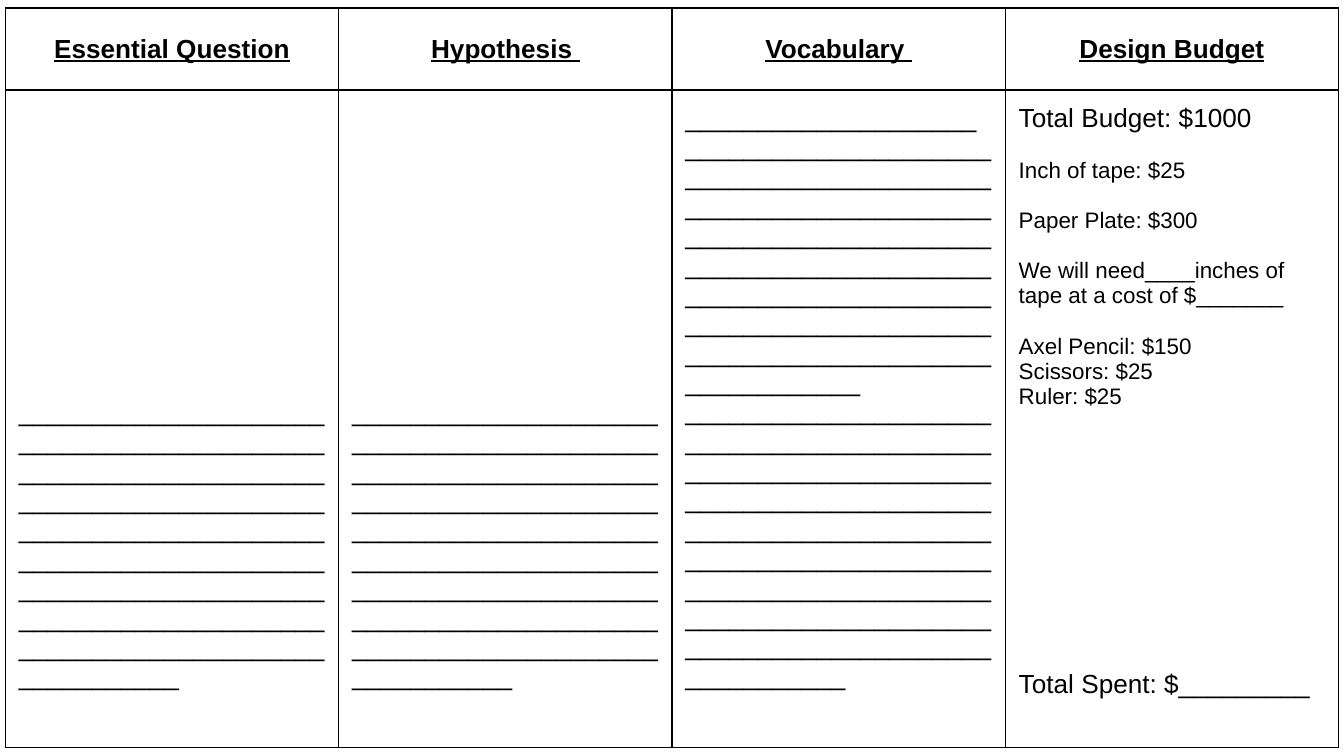
from dataclasses import dataclass

from lxml.etree import SubElement
from pptx import Presentation
from pptx.dml.color import RGBColor
from pptx.enum.text import MSO_ANCHOR, PP_ALIGN
from pptx.oxml.ns import qn
from pptx.util import Inches, Pt


@dataclass(frozen=True)
class Theme:
    ink: str = "000000"
    font: str = "Arial"
    large: float = 14
    small: float = 12
    border: float = 0.75


THEME = Theme()
PAGE_WIDTH = Inches(10)
PAGE_HEIGHT = PAGE_WIDTH * 9 // 16
HEADINGS = ["Essential Question", "Hypothesis ", "Vocabulary ", "Design Budget"]
COLUMN_WIDTH = 2.48
ROW_HEIGHTS = [0.61, 4.89]
PADDING = 0.1
ANSWER_TOP = 2.29
ITEM_GAP = 13.5
TOTAL_GAP = 139.5

# Each line: wording, type size, space after in points
BUDGET = [
    ("Total Budget: $1000", THEME.large, ITEM_GAP),
    ("Inch of tape: $25", THEME.small, ITEM_GAP),
    ("Paper Plate: $300", THEME.small, ITEM_GAP),
    ("We will need____inches of tape at a cost of $_______", THEME.small, ITEM_GAP),
    ("Axel Pencil: $150", THEME.small, 0),
    ("Scissors: $25", THEME.small, 0),
    ("Ruler: $25", THEME.small, TOTAL_GAP),
    ("Total Spent: $_________", THEME.large, 0),
]


def apply_format(target, values):
    for name, value in values.items():
        setattr(target, name, value)


def blank_lines(*counts):
    """Return one writing-line paragraph for each count of underscores."""
    return [("_" * count, THEME.large, 0) for count in counts]


def draw_borders(cell):
    properties = cell._tc.get_or_add_tcPr()
    for side in ("lnL", "lnR", "lnT", "lnB"):
        line = SubElement(properties, qn(f"a:{side}"), w=str(Pt(THEME.border)))
        fill = SubElement(line, qn("a:solidFill"))
        SubElement(fill, qn("a:srgbClr"), val=THEME.ink)


def style_cell(cell, anchor, top=PADDING):
    apply_format(cell, {
        "margin_left": Inches(PADDING),
        "margin_right": Inches(PADDING),
        "margin_top": Inches(top),
        "margin_bottom": Inches(PADDING),
        "vertical_anchor": anchor,
    })
    draw_borders(cell)
    cell.fill.background()


def write_para(para, text, size, gap=0, align=PP_ALIGN.LEFT, heading=False):
    apply_format(para, {"alignment": align, "space_after": Pt(gap)})
    span = para.add_run()
    span.text = text
    apply_format(span.font, {
        "name": THEME.font,
        "size": Pt(size),
        "bold": heading,
        "underline": heading,
    })
    span.font.color.rgb = RGBColor.from_string(THEME.ink)


def fill_heading(cell, text):
    style_cell(cell, MSO_ANCHOR.MIDDLE)
    write_para(cell.text_frame.paragraphs[0], text, THEME.large,
               align=PP_ALIGN.CENTER, heading=True)


def fill_body(cell, lines, top):
    style_cell(cell, MSO_ANCHOR.TOP, top)
    frame = cell.text_frame
    for index, (text, size, gap) in enumerate(lines):
        para = frame.add_paragraph() if index else frame.paragraphs[0]
        write_para(para, text, size, gap)


def add_worksheet(page):
    columns = len(HEADINGS)
    table = page.shapes.add_table(
        len(ROW_HEIGHTS), columns, Inches(0.04), Inches(0.06),
        Inches(COLUMN_WIDTH * columns), Inches(sum(ROW_HEIGHTS))).table
    apply_format(table, {"first_row": False, "horz_banding": False})
    for column in table.columns:
        column.width = Inches(COLUMN_WIDTH)
    for row, height in zip(table.rows, ROW_HEIGHTS):
        row.height = Inches(height)

    bodies = [
        (blank_lines(200), ANSWER_TOP),
        (blank_lines(200), ANSWER_TOP),
        (blank_lines(20, 180, 200), PADDING),
        (BUDGET, PADDING),
    ]
    for index, (heading, (lines, top)) in enumerate(zip(HEADINGS, bodies)):
        fill_heading(table.cell(0, index), heading)
        fill_body(table.cell(1, index), lines, top)


def main():
    deck = Presentation()
    apply_format(deck, {"slide_width": PAGE_WIDTH, "slide_height": PAGE_HEIGHT})
    page = deck.slides.add_slide(deck.slide_layouts[6])
    add_worksheet(page)
    deck.save("out.pptx")


if __name__ == "__main__":
    main()
